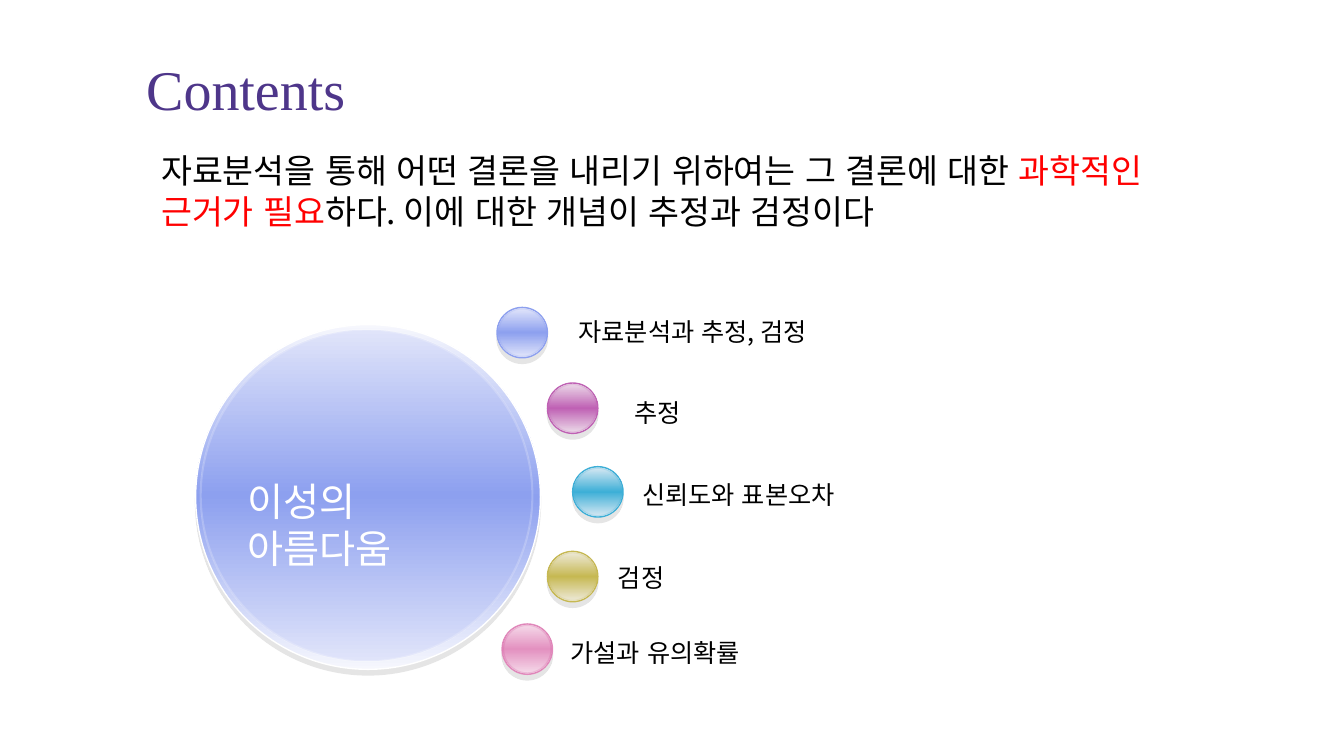
"""Contents slide: a large sphere with five small spheres and their topics."""
from lxml.etree import SubElement
from pptx import Presentation
from pptx.dml.color import RGBColor as RGB
from pptx.enum.lang import MSO_LANGUAGE_ID as LANG
from pptx.enum.shapes import MSO_SHAPE as SHAPE
from pptx.enum.text import MSO_ANCHOR as ANCHOR, MSO_AUTO_SIZE as FIT, PP_ALIGN as ALIGN
from pptx.oxml.ns import qn
from pptx.util import Inches as In, Pt

COLORS = {
    "title": "4E368A", "text": "000000", "accent": "FF0000", "white": "FFFFFF",
    "shadow": "CCCCCC", "blue": "8DA0EF", "purple": "BF61B4", "cyan": "3DAFD7",
    "olive": "C6B852", "pink": "E391C0", "rose": "D04896",
}
KOREAN = "Noto Sans CJK KR"


def add_text(left, top, width, height, size, runs):
    """Add a wrapped Korean text box made of (text, colour) runs."""
    box = slide.shapes.add_textbox(In(left), In(top), In(width), In(height))
    tf = box.text_frame
    tf.word_wrap = True
    tf.auto_size = FIT.SHAPE_TO_FIT_TEXT
    p = tf.paragraphs[0]
    for text, color in runs:
        r = p.add_run()
        r.text = text
        r.font.size = Pt(size)
        r.font.name = KOREAN
        r.font.language_id = LANG.KOREAN
        r.font.color.rgb = RGB.from_string(COLORS[color])
        SubElement(r.font._element, qn("a:ea"), typeface=KOREAN)


def add_sphere(left, top, size, inset, inner_size, rims, cores, lines):
    """Add a shadowed disc and a slightly smaller disc on it as one group."""
    group = slide.shapes.add_group_shape()
    discs = ((0, size, 1), (inset, inner_size, 1.5))
    for (gap, d, weight), rim, core, line in zip(discs, rims, cores, lines):
        sp = group.shapes.add_shape(SHAPE.OVAL, In(left + gap), In(top + gap), In(d), In(d))
        sp.fill.gradient()
        sp.fill.gradient_angle = 270
        spPr = sp._element.spPr
        stops = spPr.find(".//" + qn("a:gsLst"))
        stops[:] = []
        for pos, color in ((0, rim), (50, COLORS[core]), (100, rim)):
            stop = SubElement(stops, qn("a:gs"), pos=str(pos * 1000))
            SubElement(stop, qn("a:srgbClr"), val=color)
        sp.line.width = Pt(weight)
        sp.line.color.rgb = RGB.from_string(COLORS[line])
        sp.shadow.inherit = False
        if gap:
            SubElement(spPr.find(".//a:ln//a:srgbClr", spPr.nsmap), qn("a:alpha"), val="20000")
        else:
            shadow = SubElement(spPr.find(qn("a:effectLst")), qn("a:outerShdw"),
                                dist=str(Pt(4)), dir="5400000", rotWithShape="0")
            tint = SubElement(shadow, qn("a:srgbClr"), val=COLORS["shadow"])
            SubElement(tint, qn("a:alpha"), val="50000")


prs = Presentation()
prs.slide_width, prs.slide_height = In(13.33), In(7.5)
slide = prs.slides.add_slide(prs.slide_layouts[5])

title = slide.shapes.title
title.left, title.top, title.width, title.height = In(1.35), In(0.39), In(9.97), In(0.97)
title.text_frame.vertical_anchor = ANCHOR.MIDDLE
p = title.text_frame.paragraphs[0]
p.alignment = ALIGN.LEFT
r = p.add_run()
r.text = "Contents"
r.font.size = Pt(40)
r.font.name = "Times New Roman"
r.font.color.rgb = RGB.from_string(COLORS["title"])

halo = slide.shapes.add_shape(SHAPE.OVAL, In(1.53), In(2.8), In(4.26), In(4.26))
halo.shadow.inherit = False
halo.fill.solid()
halo.fill.fore_color.rgb = RGB.from_string(COLORS["white"])
SubElement(halo._element.spPr.find(".//" + qn("a:srgbClr")), qn("a:alpha"), val="40000")
halo.line.fill.background()

add_sphere(1.94, 3.22, 3.42, 0.05, 3.29, ("F6F7FD", "E0E4FA"),
           ("blue", "blue"), ("white", "white"))

add_text(1.5, 1.44, 10.83, 0.91, 24, [
    ("자료분석을 통해 어떤 결론을 내리기 위하여는 그 결론에 대한 ", "text"),
    ("과학적인 근거가 필요", "accent"),
    ("하다. 이에 대한 개념이 추정과 검정이다", "text"),
])

topics = [
    ("자료분석과 추정, 검정", 5.64, 3.09, 3.26, 4.93, 3.05,
     ("F6F7FD", "E0E4FA"), ("blue", "blue"), ("blue", "blue")),
    ("추정", 6.19, 3.89, 3.14, 5.43, 3.8,
     ("F9F5F9", "EBD9E8"), ("purple", "purple"), ("purple", "purple")),
    ("신뢰도와 표본오차", 6.27, 4.71, 3.33, 5.68, 4.63,
     ("F4F8FB", "D5E7F2"), ("cyan", "cyan"), ("cyan", "cyan")),
    ("검정", 6.03, 5.53, 3.37, 5.43, 5.47,
     ("FAF9F4", "EDE9D7"), ("olive", "olive"), ("olive", "olive")),
    ("가설과 유의확률", 5.56, 6.27, 3.38, 4.98, 6.19,
     ("FAECF4", "F5D9E9"), ("rose", "pink"), ("pink", "rose")),
]
for label, text_left, text_top, width, left, top, rims, cores, lines in topics:
    add_text(text_left, text_top, width, 0.4, 18, [(label, "text")])
    add_sphere(left, top, 0.5, 0.01, 0.48, rims, cores, lines)

add_text(2.36, 4.69, 2.58, 1.04, 28, [("이성의 아름다움", "white")])

prs.save("out.pptx")
